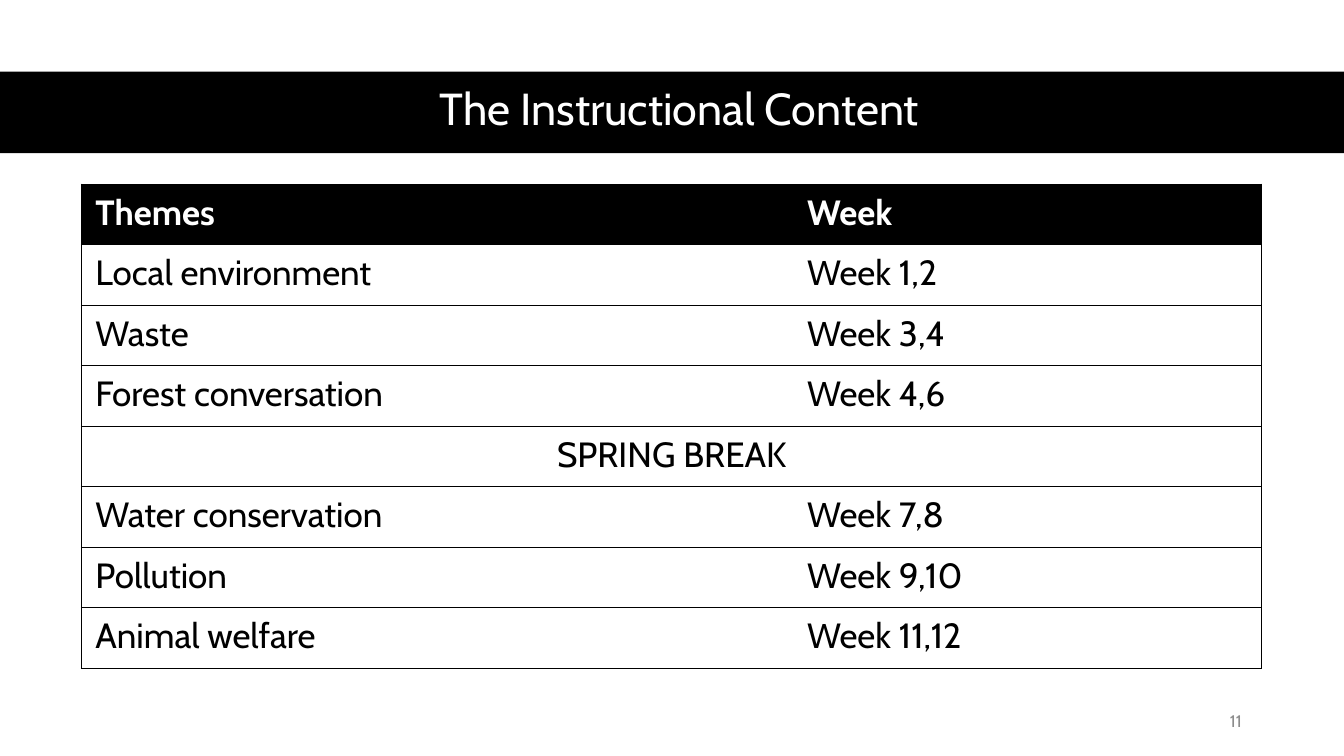
from dataclasses import dataclass

from lxml import etree
from pptx import Presentation
from pptx.dml.color import RGBColor
from pptx.enum.shapes import MSO_SHAPE
from pptx.enum.text import MSO_ANCHOR, MSO_AUTO_SIZE, PP_ALIGN
from pptx.oxml.ns import qn
from pptx.util import Pt

LEFT, CENTER, RIGHT = PP_ALIGN.LEFT, PP_ALIGN.CENTER, PP_ALIGN.RIGHT
TOP, MIDDLE = MSO_ANCHOR.TOP, MSO_ANCHOR.MIDDLE
NO_AUTOFIT = MSO_AUTO_SIZE.NONE
RECTANGLE = MSO_SHAPE.RECTANGLE
TITLE_ONLY = 5

SLIDE_WIDTH, SLIDE_HEIGHT = 960, 540
COLUMN_WIDTHS = (508.3, 334.9)
ROW_HEIGHT = 43.25
SCHEDULE = [
    ("Themes", "Week"),
    ("Local environment", "Week 1,2"),
    ("Waste", "Week 3,4"),
    ("Forest conversation", "Week 4,6"),
    ("SPRING BREAK",),
    ("Water conservation", "Week 7,8"),
    ("Pollution", "Week 9,10"),
    ("Animal welfare", "Week 11,12"),
]


@dataclass(frozen=True)
class Theme:
    font: str = "Cabin"
    ink: str = "000000"
    paper: str = "FFFFFF"
    muted: str = "8C8C8C"
    title_size: float = 32
    table_size: float = 25
    number_size: float = 12


def write(frame, text, *, font, size, color, bold=False, align=LEFT,
          line_spacing=None, space_after=None):
    frame.word_wrap = True
    paragraph = frame.paragraphs[0]
    paragraph.alignment = align
    if line_spacing is not None:
        paragraph.line_spacing = line_spacing
    if space_after is not None:
        paragraph.space_after = Pt(space_after)
    run = paragraph.add_run()
    run.text = text
    run.font.name = font
    run.font.size = Pt(size)
    run.font.bold = bold
    run.font.color.rgb = RGBColor.from_string(color)


def set_borders(cell, color, visible_sides):
    """Draw the given sides (letters of LRTB) and hide the others."""
    properties = cell._tc.get_or_add_tcPr()
    for position, side in enumerate("LRTB"):
        line = etree.Element(qn(f"a:ln{side}"), w=str(Pt(1)))
        if side in visible_sides:
            fill = etree.SubElement(line, qn("a:solidFill"))
            etree.SubElement(fill, qn("a:srgbClr"), val=color)
        else:
            etree.SubElement(line, qn("a:noFill"))
        properties.insert(position, line)


class SlideBuilder:
    def __init__(self, slide, theme):
        self.slide = slide
        self.theme = theme

    def title(self, text, left, top, width, height):
        title = self.slide.shapes.title
        title.left, title.top = Pt(left), Pt(top)
        title.width, title.height = Pt(width), Pt(height)
        frame = title.text_frame
        frame.auto_size = NO_AUTOFIT
        frame.vertical_anchor = MIDDLE
        write(frame, text, font=self.theme.font, size=self.theme.title_size,
              color=self.theme.paper, align=CENTER, line_spacing=0.9)

    def title_band(self, top, height):
        """Add a full-width band behind the title."""
        band = self.slide.shapes.add_shape(
            RECTANGLE, Pt(0), Pt(top), Pt(SLIDE_WIDTH), Pt(height))
        band.shadow.inherit = False
        band.fill.solid()
        band.fill.fore_color.rgb = RGBColor.from_string(self.theme.ink)
        band.line.fill.background()
        self.slide.shapes.title.element.addprevious(band.element)

    def page_number(self, text, left, top, width, height):
        box = self.slide.shapes.add_textbox(
            Pt(left), Pt(top), Pt(width), Pt(height))
        box.text_frame.vertical_anchor = MIDDLE
        write(box.text_frame, text, font=self.theme.font,
              size=self.theme.number_size, color=self.theme.muted,
              align=RIGHT, space_after=6)

    def table(self, rows, left, top, column_widths, row_height):
        """Add a table; a row with a single entry spans all columns."""
        table = self.slide.shapes.add_table(
            len(rows), len(column_widths), Pt(left), Pt(top),
            Pt(sum(column_widths)), Pt(row_height * len(rows))).table
        table.first_row = True
        table.horz_banding = False
        for column, width in zip(table.columns, column_widths):
            column.width = Pt(width)
        last = len(column_widths) - 1
        for row_index, entries in enumerate(rows):
            table.rows[row_index].height = Pt(row_height)
            spans = len(entries) == 1
            if spans:
                table.cell(row_index, 0).merge(table.cell(row_index, last))
            for column_index in range(last + 1):
                cell = table.cell(row_index, column_index)
                if column_index < len(entries):
                    self.table_cell(cell, entries[column_index],
                                    header=row_index == 0,
                                    align=CENTER if spans else LEFT)
                sides = "TB"
                if column_index == 0:
                    sides += "L"
                if column_index == last or spans and column_index == 0:
                    sides += "R"
                set_borders(cell, self.theme.ink, sides)

    def table_cell(self, cell, text, header, align):
        theme = self.theme
        background, color = ((theme.ink, theme.paper) if header
                             else (theme.paper, theme.ink))
        cell.fill.solid()
        cell.fill.fore_color.rgb = RGBColor.from_string(background)
        cell.margin_left = cell.margin_right = Pt(10)
        cell.margin_top = cell.margin_bottom = Pt(5)
        cell.vertical_anchor = TOP
        write(cell.text_frame, text, font=theme.font, size=theme.table_size,
              color=color, bold=header, align=align)


def main():
    presentation = Presentation()
    presentation.slide_width = Pt(SLIDE_WIDTH)
    presentation.slide_height = Pt(SLIDE_HEIGHT)
    slide = presentation.slides.add_slide(
        presentation.slide_layouts[TITLE_ONLY])

    builder = SlideBuilder(slide, Theme())
    builder.title_band(51.2, 58.2)
    builder.title("The Instructional Content", 44, 50.4, 882.6, 58.2)
    builder.page_number("11", 678.2, 500.5, 216, 28.8)
    builder.table(SCHEDULE, 58.2, 131.6, COLUMN_WIDTHS, ROW_HEIGHT)

    presentation.save("out.pptx")


if __name__ == "__main__":
    main()
